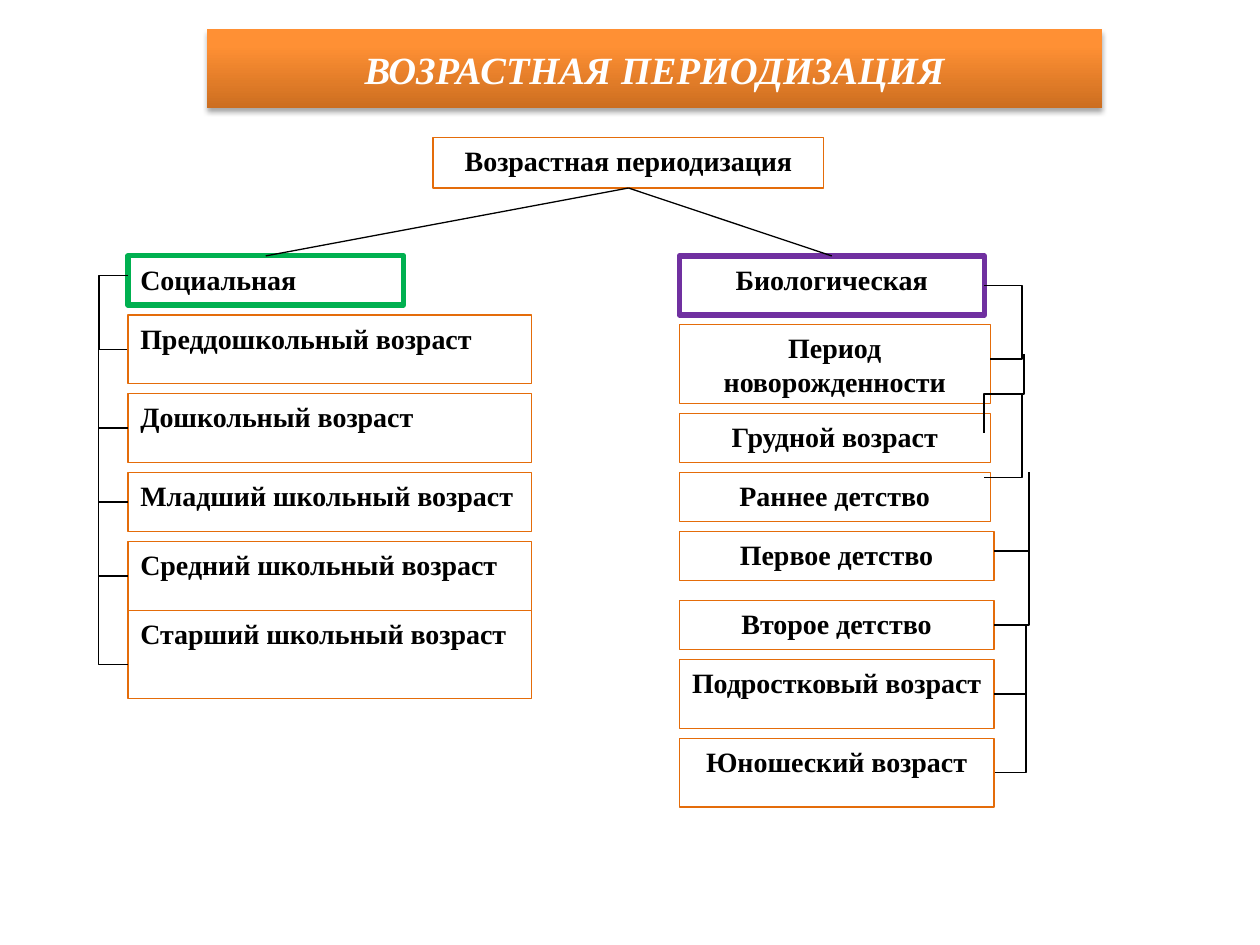
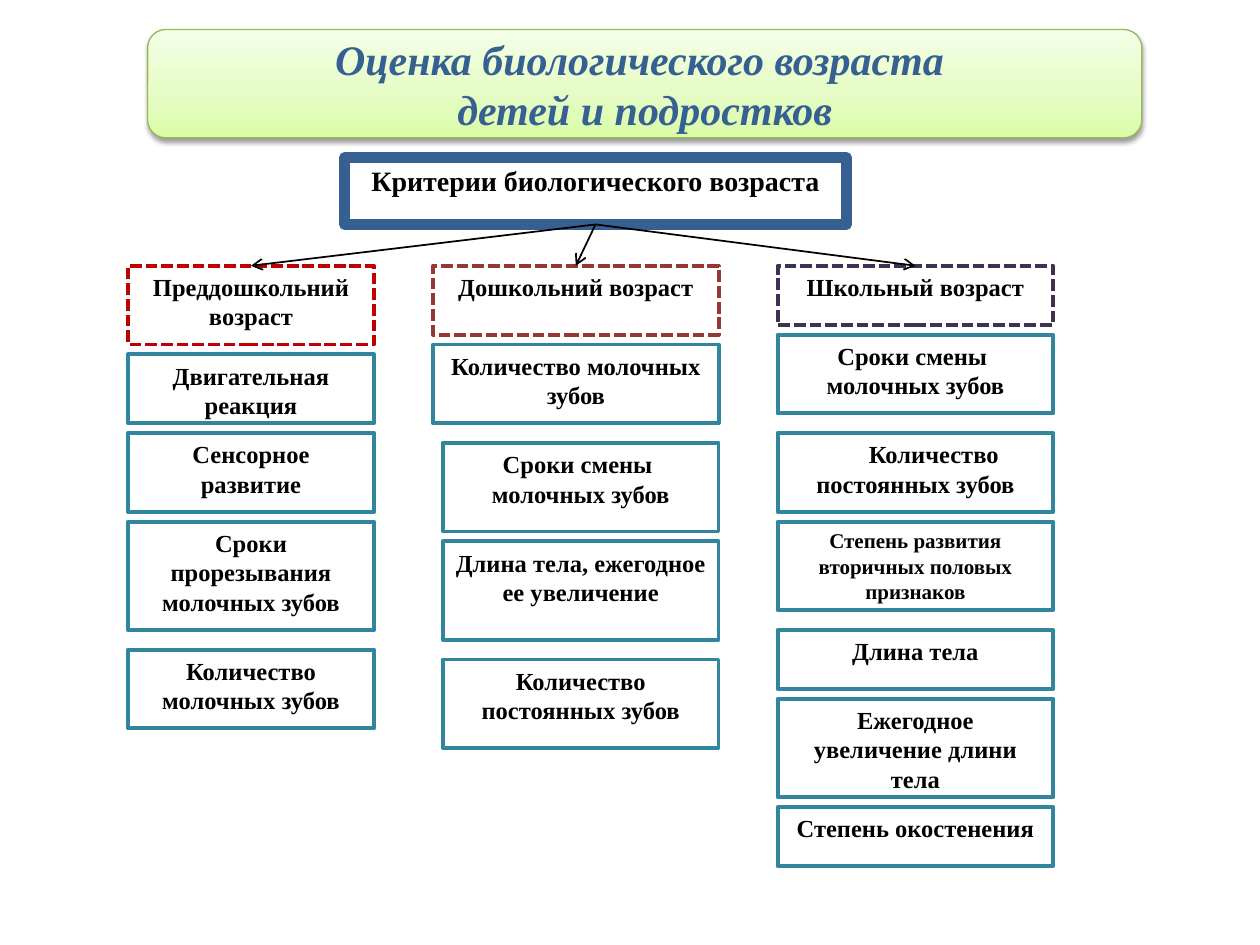
from typing import NamedTuple, Optional

from lxml.etree import SubElement
from pptx import Presentation
from pptx.dml.color import RGBColor
from pptx.enum.dml import MSO_LINE
from pptx.enum.shapes import MSO_CONNECTOR, MSO_SHAPE
from pptx.enum.text import MSO_ANCHOR, PP_ALIGN
from pptx.oxml.ns import qn
from pptx.util import Inches, Pt

COLORS = {
    "white": "FFFFFF", "black": "000000", "orange": "E46C0A", "green": "00B050",
    "purple": "7030A0", "blue": "376092", "red": "C00000", "brown": "953735",
    "plum": "403152", "teal": "31859C", "olive": "98B955",
    "rust": "CC6E20", "amber": "FF9034", "apricot": "FF9136",
    "lime": "DAFDA7", "mint": "E4FCC2", "cream": "F5FFE7",
}
FONT = "Times New Roman"
SLIDE_WIDTH, SLIDE_HEIGHT = Inches(10), Inches(7.5)
COLUMNS = 128
CELL = SLIDE_WIDTH / COLUMNS
HAIR = 0.1


class Border(NamedTuple):
    color: str
    width: float
    dashed: bool = False


class Box(NamedTuple):
    column: float
    row: float
    columns: float
    rows: float
    text: str
    border: Border
    size: float = 14
    align: PP_ALIGN = PP_ALIGN.CENTER
    indent: float = 0


class Banner(NamedTuple):
    column: float
    columns: float
    rows: float
    text: str
    size: float
    color: str
    stops: tuple
    shape: MSO_SHAPE
    shadow_alpha: int
    shadow_distance: float
    border: Optional[Border] = None


class Elbow(NamedTuple):
    column: float
    row: float
    spine: float
    spine_row: float


class Bracket(NamedTuple):
    column: float
    row: float
    end_column: float
    end_row: float
    spine: float
    width: float = 1


THIN = Border("orange", 0.75)
TEAL = Border("teal", 2.25)

PERIOD_BANNER = Banner(21, 91, 8, "ВОЗРАСТНАЯ ПЕРИОДИЗАЦИЯ", 22, "white",
                       ((0, "rust"), (80, "amber"), (100, "apricot")),
                       MSO_SHAPE.RECTANGLE, 35, 1.8)
CRITERIA_BANNER = Banner(15, 101, 11, "Оценка биологического возраста \vдетей и подростков",
                         24, "blue", ((0, "lime"), (35, "mint"), (100, "cream")),
                         MSO_SHAPE.ROUNDED_RECTANGLE, 38, 1.6, Border("olive", 0.75))

PERIOD_ROOT = Box(44, 14, 39.7, 5.1, "Возрастная периодизация", THIN, 16)
PERIOD_HEADS = [
    Box(13, 26, 28, 5, "Социальная", Border("green", 3), 16, PP_ALIGN.LEFT),
    Box(69, 26, 31, 6, "Биологическая", Border("purple", 3), 16),
]
SOCIAL_AGES = [
    (32, 7, "Преддошкольный возраст"),
    (40, 7, "Дошкольный возраст"),
    (48, 6, "Младший школьный возраст"),
    (55, 7, "Средний школьный возраст"),
    (62, 9, "Старший школьный возраст"),
]
BIOLOGICAL_AGES = [
    (33, 31.6, 8, "Период новорожденности"),
    (42, 31.6, 5, "Грудной возраст"),
    (48, 31.6, 5, "Раннее детство"),
    (54, 32, 5, "Первое детство"),
    (61, 32, 5, "Второе детство"),
    (67, 32, 7, "Подростковый возраст"),
    (75, 32, 7, "Юношеский возраст"),
]
ELBOWS = [
    *(Elbow(13, row, 10, top) for row, top in ((43.5, 35), (51, 43), (58.5, 50), (67.5, 58))),
    Elbow(102, 40, 104, 36),
    Elbow(102, 40, 100, 44),
    Elbow(100, 48.5, 103.8, 40),
    Elbow(101, 56, 104.5, 48),
    Elbow(101, 63.5, 104.5, 53),
]
BRACKETS = [
    Bracket(13, 28, 13 - HAIR, 35.5, 10.1),
    Bracket(100, 29, 100.6, 36.5, 103.8),
    Bracket(101, 63.5, 101 + HAIR, 70.5, 104.2, 0.75),
    Bracket(101, 70.5, 101 + HAIR, 78.5, 104.2, 0.75),
]

CRITERIA_ROOT = Box(35, 16, 51, 6.8, "Критерии биологического возраста", Border("blue", 6), 16)
CRITERIA_HEADS = [
    Box(13, 27, 25, 8, "Преддошкольний возраст", Border("red", 2.25, True)),
    Box(44, 27, 29, 7, "Дошкольний возраст", Border("brown", 2.25, True)),
    Box(79, 27, 28, 6, "Школьный возраст", Border("plum", 2.25, True)),
]
CHANGE_OF_TEETH = "Сроки смены \nмолочных зубов"
CRITERIA = [
    Box(13, 36, 25, 7, "Двигательная реакция", TEAL),
    Box(13, 44, 25, 8, "Сенсорное развитие", TEAL),
    Box(13, 53, 25, 11, "Сроки прорезывания молочных зубов", TEAL),
    Box(13, 66, 25, 8, "Количество молочных зубов", TEAL),
    Box(44, 35, 29, 8, "Количество молочных зубов", TEAL),
    Box(45, 45, 28, 9, CHANGE_OF_TEETH, TEAL),
    Box(45, 55, 28, 10, "Длина тела, ежегодное ее увеличение", TEAL),
    Box(45, 67, 28, 9, "Количество постоянных зубов", TEAL),
    Box(79, 34, 28, 8, CHANGE_OF_TEETH, TEAL),
    Box(79, 44, 28, 8, "Количество постоянных зубов", TEAL, indent=21),
    Box(79, 53, 28, 9, "Степень развития вторичных половых признаков", TEAL, 12),
    Box(79, 64, 28, 6, "Длина тела", TEAL),
    Box(79, 71, 28, 10, "Ежегодное увеличение длини тела", TEAL),
    Box(79, 82, 28, 6, "Степень окостенения", TEAL),
]


def grid(*cells: float) -> list[int]:
    return [round(cell * CELL) for cell in cells]


def color(name: str) -> RGBColor:
    return RGBColor.from_string(COLORS[name])


def set_border(shape, border: Optional[Border]) -> None:
    if border is None:
        shape.line.fill.background()
        return
    shape.line.color.rgb = color(border.color)
    shape.line.width = Pt(border.width)
    if border.dashed:
        shape.line.dash_style = MSO_LINE.SQUARE_DOT


def set_text(shape, text: str, size: float, name: str, align: PP_ALIGN, italic: bool = False) -> None:
    frame = shape.text_frame
    frame.word_wrap = True
    frame.text = text
    for paragraph in frame.paragraphs:
        paragraph.alignment = align
        for span in paragraph.runs:
            span.font.name = FONT
            span.font.size = Pt(size)
            span.font.bold = True
            span.font.italic = italic
            span.font.color.rgb = color(name)


def add_color(parent, name: str):
    return SubElement(parent, qn("a:srgbClr"), val=COLORS[name])


def draw_banner(page, banner: Banner) -> None:
    shape = page.shapes.add_shape(banner.shape, *grid(banner.column, 3, banner.columns, banner.rows))
    shape.fill.gradient()
    shape.fill.gradient_angle = 90
    stop_list = shape._element.spPr.find(qn("a:gradFill")).find(qn("a:gsLst"))
    for stop in list(stop_list):
        stop_list.remove(stop)
    for position, name in banner.stops:
        add_color(SubElement(stop_list, qn("a:gs"), pos=str(position * 1000)), name)
    set_border(shape, banner.border)
    shape.shadow.inherit = False
    shadow = SubElement(shape._element.spPr.find(qn("a:effectLst")), qn("a:outerShdw"),
                        blurRad=str(Pt(3.1)), dist=str(Pt(banner.shadow_distance)),
                        dir="5400000", rotWithShape="0")
    SubElement(add_color(shadow, "black"), qn("a:alpha"), val=str(banner.shadow_alpha * 1000))
    set_text(shape, banner.text, banner.size, banner.color, PP_ALIGN.CENTER, italic=True)
    shape.text_frame.vertical_anchor = MSO_ANCHOR.MIDDLE


def draw_box(page, box: Box) -> None:
    shape = page.shapes.add_shape(MSO_SHAPE.RECTANGLE, *grid(box.column, box.row, box.columns, box.rows))
    shape.shadow.inherit = False
    shape.fill.solid()
    shape.fill.fore_color.rgb = color("white")
    set_border(shape, box.border)
    set_text(shape, box.text, box.size, "black", box.align)
    shape.text_frame.vertical_anchor = MSO_ANCHOR.TOP
    paragraphs = shape.text_frame.paragraphs
    if len(paragraphs) == 1:
        paragraphs[0].space_after = Pt(10)
    if box.indent:
        paragraphs[0]._p.get_or_add_pPr().set("indent", str(Pt(box.indent)))


def draw_connector(page, kind: MSO_CONNECTOR, ends: tuple, width: float):
    connector = page.shapes.add_connector(kind, *grid(*ends))
    set_border(connector, Border("black", width))
    SubElement(connector._element.spPr, qn("a:effectLst"))
    return connector


def draw_branches(page, root: Box, heads: list[Box], width: float, arrow: bool = False) -> None:
    for head in heads:
        ends = (root.column + root.columns / 2, root.row + root.rows,
                head.column + head.columns / 2, head.row)
        connector = draw_connector(page, MSO_CONNECTOR.STRAIGHT, ends, width)
        if arrow:
            SubElement(connector.line._get_or_add_ln(), qn("a:tailEnd"), type="arrow")


def draw_elbow(page, elbow: Elbow) -> None:
    connector = draw_connector(page, MSO_CONNECTOR.ELBOW, elbow, 1)
    connector._element.spPr.find(qn("a:prstGeom")).set("prst", "bentConnector2")


def draw_bracket(page, bracket: Bracket) -> None:
    connector = draw_connector(page, MSO_CONNECTOR.ELBOW, bracket[:4], bracket.width)
    reach = (bracket.spine - bracket.column) / (bracket.end_column - bracket.column)
    guides = connector._element.spPr.find(qn("a:prstGeom")).get_or_add_avLst()
    SubElement(guides, qn("a:gd"), name="adj1", fmla=f"val {round(reach * 100000)}")


def add_page(deck, banner: Banner, boxes: list[Box]):
    page = deck.slides.add_slide(deck.slide_layouts[6])
    draw_banner(page, banner)
    for box in boxes:
        draw_box(page, box)
    return page


def build_periods(deck) -> None:
    social = [Box(13, row, 41, rows, text, THIN, 16, PP_ALIGN.LEFT)
              for row, rows, text in SOCIAL_AGES]
    biological = [Box(69, row, columns, rows, text, THIN, 16)
                  for row, columns, rows, text in BIOLOGICAL_AGES]
    page = add_page(deck, PERIOD_BANNER, [PERIOD_ROOT, *PERIOD_HEADS, *social, *biological])
    draw_branches(page, PERIOD_ROOT, PERIOD_HEADS, 0.75)
    for elbow in ELBOWS:
        draw_elbow(page, elbow)
    for bracket in BRACKETS:
        draw_bracket(page, bracket)


def build_criteria(deck) -> None:
    page = add_page(deck, CRITERIA_BANNER, [CRITERIA_ROOT, *CRITERIA_HEADS, *CRITERIA])
    draw_branches(page, CRITERIA_ROOT, CRITERIA_HEADS, 1, arrow=True)


def main() -> None:
    deck = Presentation()
    deck.slide_width, deck.slide_height = SLIDE_WIDTH, SLIDE_HEIGHT
    build_periods(deck)
    build_criteria(deck)
    deck.save("out.pptx")


if __name__ == "__main__":
    main()
